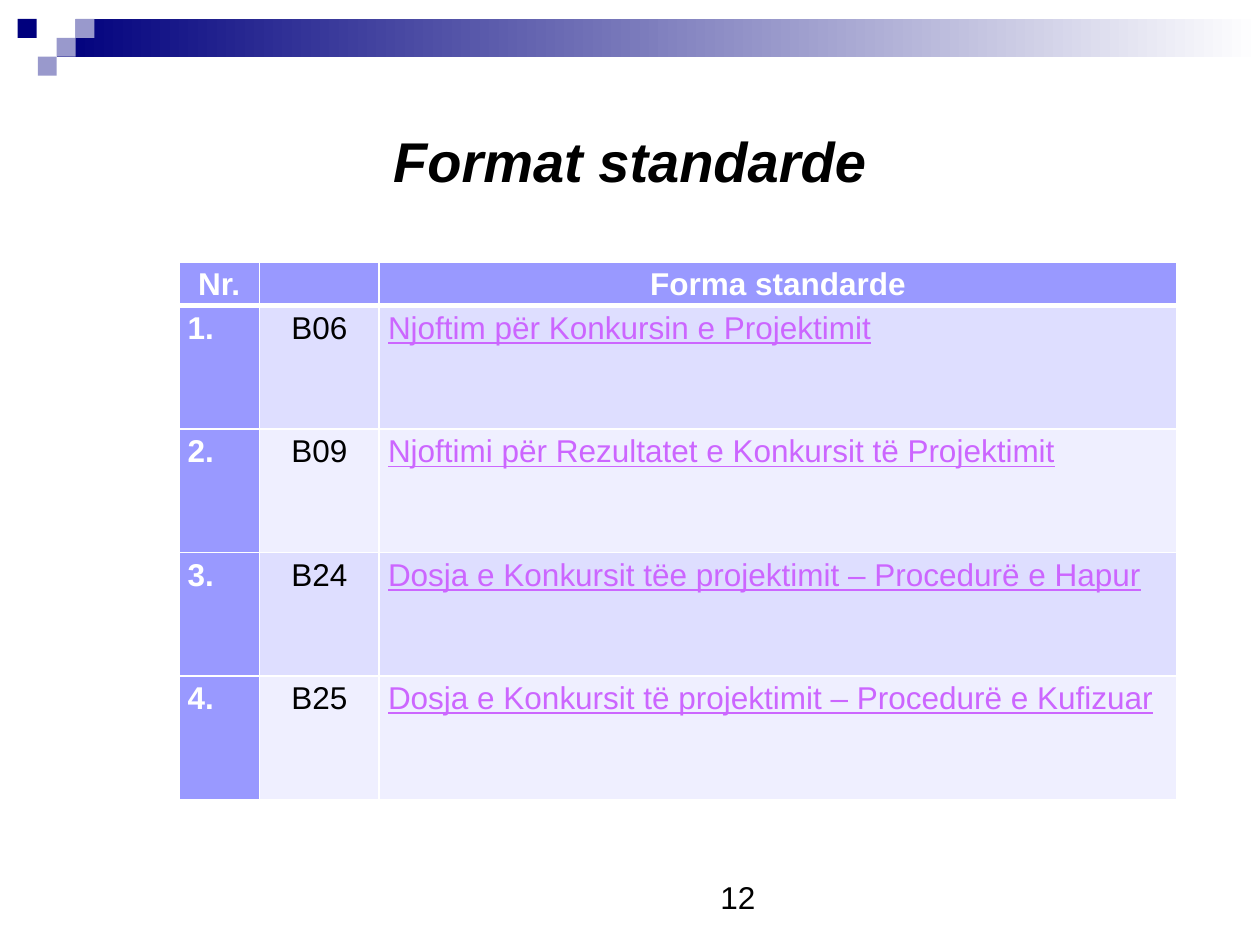
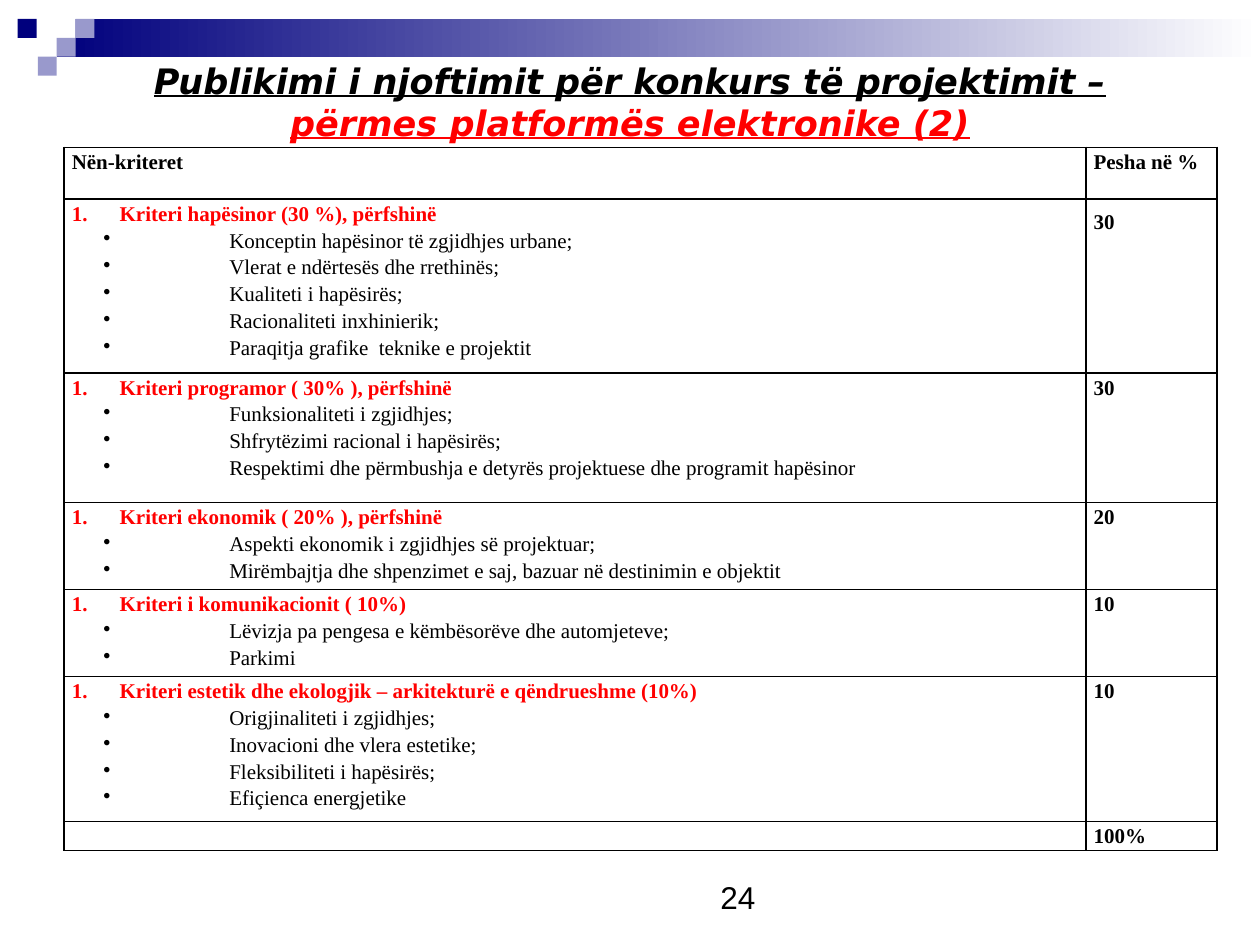
from lxml import etree
from pptx import Presentation
from pptx.dml.color import RGBColor
from pptx.enum.shapes import MSO_SHAPE
from pptx.enum.text import MSO_ANCHOR, PP_ALIGN
from pptx.oxml.ns import qn
from pptx.util import Inches, Pt

RECTANGLE = MSO_SHAPE.RECTANGLE
LEFT, CENTER = PP_ALIGN.LEFT, PP_ALIGN.CENTER
MIDDLE, BOTTOM = MSO_ANCHOR.MIDDLE, MSO_ANCHOR.BOTTOM

BLACK, WHITE, RED = "000000", "FFFFFF", "FF0000"
NAVY, LAVENDER = "00007D", "9999CC"
HEADER, ROW_DARK, ROW_LIGHT, LINK = "9999FF", "DEDEFF", "EFEFFF", "CC66FF"
SANS, TITLE_SANS, SERIF = "Arial", "DejaVu Sans", "Times New Roman"

CORNER_SQUARES = [
    (0.45, 0.15, WHITE),
    (0.6, 0.15, LAVENDER),
    (0.14, 0.15, NAVY),
    (0.45, 0.3, LAVENDER),
    (0.3, 0.45, LAVENDER),
]

FORMS = [
    ("B06", "Njoftim për Konkursin e Projektimit"),
    ("B09", "Njoftimi për Rezultatet e Konkursit të Projektimit"),
    ("B24", "Dosja e Konkursit tëe projektimit – Procedurë e Hapur"),
    ("B25", "Dosja e Konkursit të projektimit – Procedurë e Kufizuar"),
]

CRITERIA = [
    (1.38, "30", "Kriteri hapësinor (30 %), përfshinë", [
        "Konceptin hapësinor të zgjidhjes urbane;",
        "Vlerat e ndërtesës dhe rrethinës;",
        "Kualiteti i hapësirës;",
        "Racionaliteti inxhinierik;",
        "Paraqitja grafike  teknike e projektit",
    ]),
    (1.03, "30", "Kriteri programor ( 30% ), përfshinë", [
        "Funksionaliteti i zgjidhjes;",
        "Shfrytëzimi racional i hapësirës;",
        "Respektimi dhe përmbushja e detyrës projektuese dhe programit hapësinor",
    ]),
    (0.69, "20", "Kriteri ekonomik ( 20% ), përfshinë", [
        "Aspekti ekonomik i zgjidhjes së projektuar;",
        "Mirëmbajtja dhe shpenzimet e saj, bazuar në destinimin e objektit",
    ]),
    (0.69, "10", "Kriteri i komunikacionit ( 10%)", [
        "Lëvizja pa pengesa e këmbësorëve dhe automjeteve;",
        "Parkimi",
    ]),
    (1.15, "10", "Kriteri estetik dhe ekologjik – arkitekturë e qëndrueshme (10%)", [
        "Origjinaliteti i zgjidhjes;",
        "Inovacioni dhe vlera estetike;",
        "Fleksibiliteti i hapësirës;",
        "Efiçienca energjetike",
    ]),
]


def rgb(value):
    """Turn a hex string into a colour."""
    return RGBColor.from_string(value)


def add_run(paragraph, text, font=SANS, size=18, color=BLACK, bold=False,
            italic=False, underline=False):
    """Add formatted text to a paragraph."""
    run = paragraph.add_run()
    run.text = text
    run.font.name = font
    run.font.size = Pt(size)
    run.font.color.rgb = rgb(color)
    run.font.bold = bold
    run.font.italic = italic
    run.font.underline = underline


def set_bullet(paragraph, margin, hanging, tag, **attributes):
    """Give a paragraph a hanging bullet or number."""
    properties = paragraph._p.get_or_add_pPr()
    properties.set("marL", str(Inches(margin)))
    properties.set("indent", str(-Inches(hanging)))
    etree.SubElement(properties, qn(tag), attributes)


def set_borders(cell, color, bottom=1, top=1):
    """Draw the four borders of a cell."""
    properties = cell._tc.get_or_add_tcPr()
    for side, width in (("L", 1), ("R", 1), ("T", top), ("B", bottom)):
        line = etree.SubElement(properties, qn(f"a:ln{side}"), w=str(Pt(width)))
        fill = etree.SubElement(line, qn("a:solidFill"))
        etree.SubElement(fill, qn("a:srgbClr"), val=color)


class Deck:
    """Hold the shared style and the current slide."""

    def __init__(self):
        """Start an empty presentation."""
        self.presentation = Presentation()
        self.presentation.slide_width = Inches(10)
        self.presentation.slide_height = Inches(7.5)
        self.slide = None

    def add_slide(self, number):
        """Add a slide with the band, corner squares and page number."""
        layout = self.presentation.slide_layouts[6]
        self.slide = self.presentation.slides.add_slide(layout)
        band = self.rectangle(0.45, 0.15, 9.55, 0.3)
        band.fill.gradient()
        band.fill.gradient_angle = 0
        for stop, color in zip(band.fill.gradient_stops, (NAVY, WHITE)):
            stop.color.rgb = rgb(color)
        for left, top, color in CORNER_SQUARES:
            square = self.rectangle(left, top, 0.15, 0.15)
            square.fill.solid()
            square.fill.fore_color.rgb = rgb(color)
        paragraph = self.text_box(5.62, 6.92, 0.64, 0.4, wrap=False)
        add_run(paragraph, number)

    def rectangle(self, left, top, width, height):
        """Add a rectangle without line or shadow."""
        shape = self.slide.shapes.add_shape(
            RECTANGLE, Inches(left), Inches(top), Inches(width), Inches(height))
        shape.shadow.inherit = False
        shape.line.fill.background()
        return shape

    def text_box(self, left, top, width, height, wrap=True, anchor=None):
        """Add a text box and return its first paragraph."""
        shape = self.slide.shapes.add_textbox(
            Inches(left), Inches(top), Inches(width), Inches(height))
        frame = shape.text_frame
        frame.word_wrap = wrap
        if anchor is not None:
            frame.vertical_anchor = anchor
        return frame.paragraphs[0]

    def title(self, top, height, anchor, runs, **style):
        """Add a centred bold italic title from text and colour pairs."""
        paragraph = self.text_box(0.51, top, 8.98, height, anchor=anchor)
        paragraph.alignment = CENTER
        for text, color in runs:
            add_run(paragraph, text, color=color, bold=True, italic=True, **style)

    def table(self, left, top, columns, rows):
        """Add a plain table sized by its columns and rows."""
        table = self.slide.shapes.add_table(
            len(rows), len(columns), Inches(left), Inches(top),
            Inches(sum(columns)), Inches(sum(rows))).table
        table.first_row = table.horz_banding = False
        for column, width in zip(table.columns, columns):
            column.width = Inches(width)
        for row, height in zip(table.rows, rows):
            row.height = Inches(height)
        return table

    def cell(self, cell, text, margin=0.07, fill=None, align=LEFT, spacing=1.15,
             border=BLACK, top=1, bottom=1, **style):
        """Fill and frame a cell with one paragraph."""
        cell.margin_left = cell.margin_right = Inches(margin)
        cell.margin_top = cell.margin_bottom = 0
        set_borders(cell, border, bottom, top)
        if fill:
            cell.fill.solid()
            cell.fill.fore_color.rgb = rgb(fill)
        else:
            cell.fill.background()
        paragraph = cell.text_frame.paragraphs[0]
        paragraph.alignment = align
        paragraph.line_spacing = spacing
        if text:
            add_run(paragraph, text, **style)
        else:
            ending = paragraph._p.get_or_add_endParaRPr()
            ending.set("sz", str(style["size"] * 100))
        return paragraph

    def bullets(self, cell, items, **style):
        """Append bulleted paragraphs to a cell."""
        for item in items:
            paragraph = cell.text_frame.add_paragraph()
            paragraph.line_spacing = 1.15
            set_bullet(paragraph, 1.25, 1, "a:buChar", char="•")
            add_run(paragraph, item, **style)


def build_forms(deck):
    """Build the slide that lists the standard forms."""
    deck.add_slide("12")
    deck.title(0.55, 1.04, BOTTOM, [("Format standarde", BLACK)], size=32)
    table = deck.table(1.42, 2.08, [0.64, 0.95, 6.33], [0.33] + [0.98] * len(FORMS))
    for column, heading in enumerate(["Nr.", "", "Forma standarde"]):
        deck.cell(table.cell(0, column), heading, fill=HEADER, align=CENTER,
                  border=WHITE, bottom=3, size=18, color=WHITE, bold=True)
    for row, (code, form) in enumerate(FORMS, 1):
        fill = ROW_DARK if row % 2 else ROW_LIGHT
        frame = {"border": WHITE, "top": 3 if row == 1 else 1}
        deck.cell(table.cell(row, 0), f"{row}.", fill=HEADER, color=WHITE,
                  bold=True, **frame)
        deck.cell(table.cell(row, 1), code, fill=fill, align=CENTER, **frame)
        deck.cell(table.cell(row, 2), form, fill=fill, color=LINK,
                  underline=True, **frame)


def build_criteria(deck):
    """Build the slide that lists the criteria and their weights."""
    deck.add_slide("24")
    deck.title(0.42, 0.77, MIDDLE, [
        ("Publikimi i njoftimit për konkurs të projektimit – ", BLACK),
        ("përmes platformës elektronike (2)", RED),
    ], font=TITLE_SANS, size=20, underline=True)
    heights = [0.41] + [criterion[0] for criterion in CRITERIA] + [0.23]
    table = deck.table(0.51, 1.17, [8.11, 1.04], heights)
    body = {"font": SERIF, "size": 12}
    strong = {"margin": 0.06, "bold": True, **body}
    deck.cell(table.cell(0, 0), "Nën-kriteret", **strong)
    deck.cell(table.cell(0, 1), "Pesha në %", **strong)
    for row, (_, weight, heading, items) in enumerate(CRITERIA, 1):
        cell = table.cell(row, 0)
        paragraph = deck.cell(cell, heading, color=RED, **strong)
        set_bullet(paragraph, 0.38, 0.38, "a:buAutoNum", type="arabicPeriod")
        deck.bullets(cell, items, **body)
        deck.cell(table.cell(row, 1), weight, spacing=1.5 if row == 1 else 1.15,
                  **strong)
    last = len(heights) - 1
    deck.cell(table.cell(last, 0), "", **strong)
    deck.cell(table.cell(last, 1), "100%", **strong)


def main():
    """Build and save the presentation."""
    deck = Deck()
    build_forms(deck)
    build_criteria(deck)
    deck.presentation.save("out.pptx")


if __name__ == "__main__":
    main()
